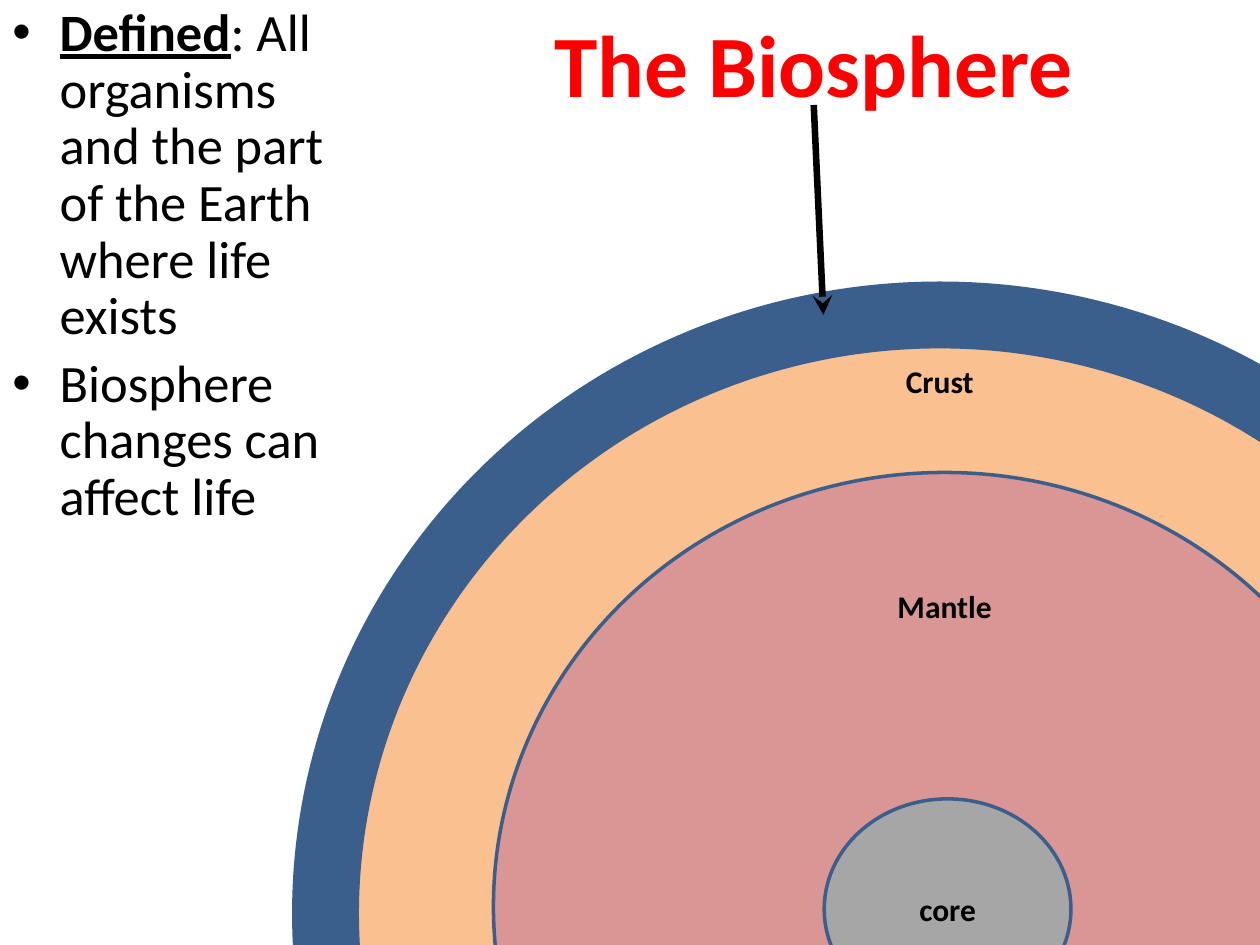
import pptx
import pptx.util
import pptx.dml.color
import pptx.enum.shapes
import pptx.enum.text
import pptx.oxml
import pptx.oxml.ns
from dataclasses import dataclass

Pt = pptx.util.Pt
RGB = pptx.dml.color.RGBColor.from_string
SHAPE = pptx.enum.shapes.MSO_SHAPE
ANCHOR = pptx.enum.text.MSO_ANCHOR
ALIGN = pptx.enum.text.PP_ALIGN


@dataclass(frozen=True)
class Theme:
    font: str = "Calibri"
    title_color: str = "FF0000"
    text_color: str = "000000"
    ring_color: str = "3A5F8C"
    title_size: float = 50
    body_size: float = 30
    label_size: float = 18
    layer_line: float = 2
    biosphere_line: float = 38.25
    arrow_line: float = 3.75
    bullet_indent: float = 27
    bullet_gap: float = 6


THEME = Theme()
SLIDE_SIZE = (720, 540)
TITLE = "The Biosphere"
TITLE_BOX = (210, 0, 510, 72)
BODY_BOX = (0, 0, 216, 540)
# Each point is a list of (text, is key term).
POINTS = [
    [("Defined", True),
     (": All organisms and the part of the Earth where life exists", False)],
    [("Biosphere changes can affect life", False)],
]
# Label, ellipse box, fill, middle height of the label
LAYERS = [
    ("Crust", (192, 192, 690, 654), "FAC090", 217.5),
    ("Mantle", (282, 270, 515.5, 496), "D99694", 346),
    ("core", (471, 456.5, 141, 126), "A6A6A6", None),
]
LABEL_SIZE = (120, 30)
BIOSPHERE_BOX = (186, 180, 702, 684)
ARROW = (465, 60, 470.5, 180)


def points(values):
    return [Pt(value) for value in values]


def style(span, size, color=THEME.text_color, bold=False, underline=False):
    span.font.name = THEME.font
    span.font.size = Pt(size)
    span.font.bold = bold
    span.font.underline = underline
    span.font.color.rgb = RGB(color)


def write_centred(box, text, size, color=THEME.text_color):
    frame = box.text_frame
    frame.text = text
    frame.word_wrap = True
    frame.auto_size = pptx.enum.text.MSO_AUTO_SIZE.NONE
    frame.vertical_anchor = ANCHOR.MIDDLE
    para = frame.paragraphs[0]
    para.alignment = ALIGN.CENTER
    style(para.runs[0], size, color, bold=True)


def add_title(page):
    title = page.shapes.title
    title.left, title.top, title.width, title.height = points(TITLE_BOX)
    write_centred(title, TITLE, THEME.title_size, THEME.title_color)


def add_bullet(para):
    properties = para._p.get_or_add_pPr()
    indent = Pt(THEME.bullet_indent)
    properties.set("marL", str(indent))
    properties.set("indent", str(-indent))
    namespace = pptx.oxml.ns.nsdecls("a")
    for xml in (f'<a:buFont {namespace} typeface="Arial"/>',
                f'<a:buChar {namespace} char="•"/>'):
        properties.append(pptx.oxml.parse_xml(xml))


def add_points(page):
    frame = page.shapes.add_textbox(*points(BODY_BOX)).text_frame
    frame.word_wrap = True
    for index, parts in enumerate(POINTS):
        para = frame.add_paragraph() if index else frame.paragraphs[0]
        para.line_spacing = 0.9
        para.space_before = Pt(THEME.bullet_gap)
        add_bullet(para)
        for text, key_term in parts:
            span = para.add_run()
            span.text = text
            style(span, THEME.body_size, bold=key_term, underline=key_term)


def add_ellipse(page, place, line_width, fill=None):
    ellipse = page.shapes.add_shape(SHAPE.OVAL, *points(place))
    ellipse.shadow.inherit = False
    if fill:
        ellipse.fill.solid()
        ellipse.fill.fore_color.rgb = RGB(fill)
    else:
        ellipse.fill.background()
    ellipse.line.color.rgb = RGB(THEME.ring_color)
    ellipse.line.width = Pt(line_width)
    return ellipse


def add_layers(page):
    label_width, label_height = LABEL_SIZE
    for label, place, fill, label_middle in LAYERS:
        box = add_ellipse(page, place, THEME.layer_line, fill)
        if label_middle is not None:
            left = place[0] + (place[2] - label_width) / 2
            top = label_middle - label_height / 2
            box = page.shapes.add_textbox(
                *points((left, top, label_width, label_height)))
        write_centred(box, label, THEME.label_size)


def add_arrow(page):
    arrow = page.shapes.add_connector(
        pptx.enum.shapes.MSO_CONNECTOR.STRAIGHT, *points(ARROW))
    arrow.line.color.rgb = RGB(THEME.text_color)
    arrow.line.width = Pt(THEME.arrow_line)
    namespace = pptx.oxml.ns.nsdecls("a")
    arrow.line._get_or_add_ln().append(
        pptx.oxml.parse_xml(f'<a:tailEnd {namespace} type="stealth"/>'))
    arrow._element.spPr.append(
        pptx.oxml.parse_xml(f"<a:effectLst {namespace}/>"))


def main():
    deck = pptx.Presentation()
    deck.slide_width, deck.slide_height = points(SLIDE_SIZE)
    page = deck.slides.add_slide(deck.slide_layouts.get_by_name("Title Only"))
    add_title(page)
    add_points(page)
    add_layers(page)
    add_ellipse(page, BIOSPHERE_BOX, THEME.biosphere_line)
    add_arrow(page)
    deck.save("out.pptx")


if __name__ == "__main__":
    main()
